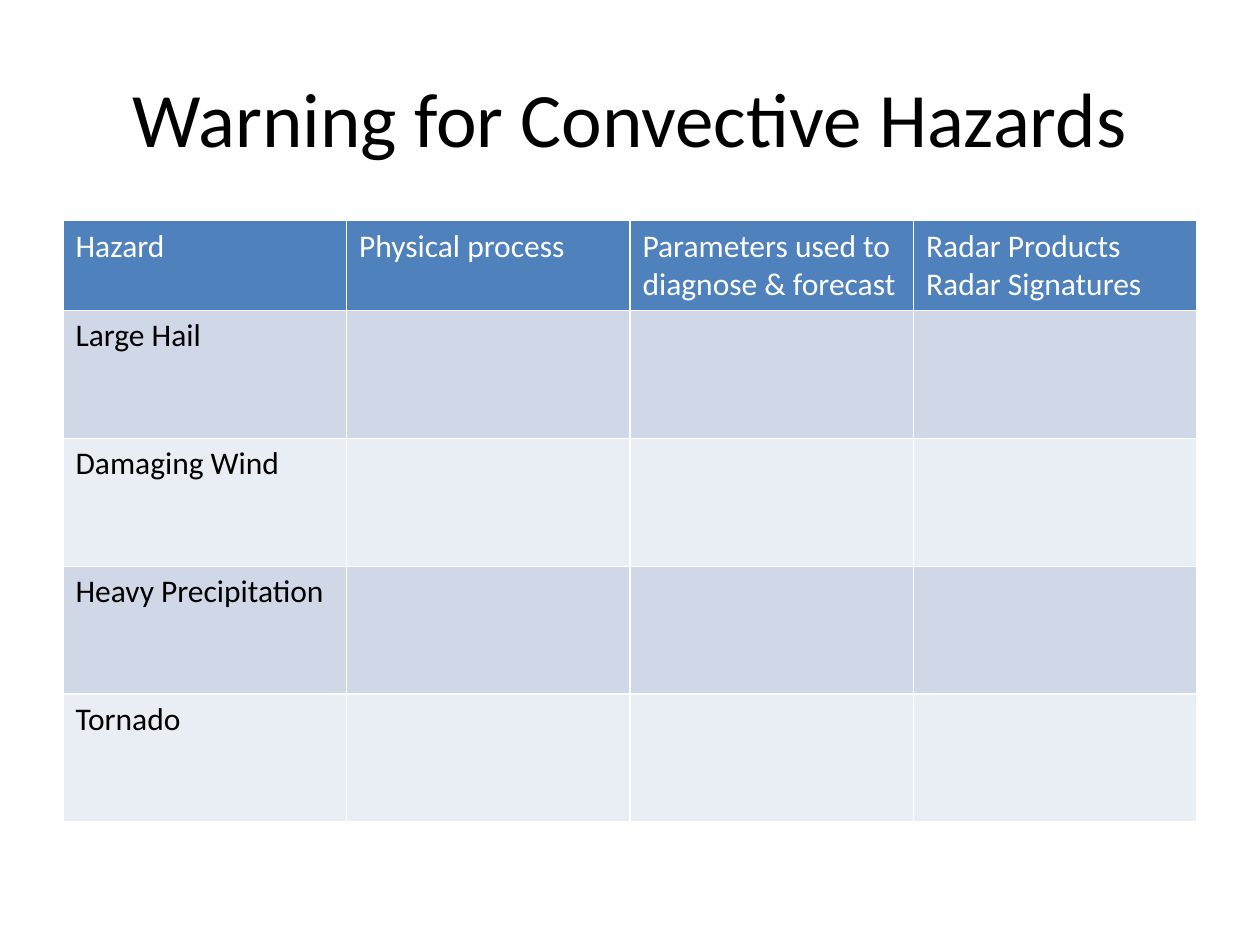
from pptx import Presentation
from pptx.dml.color import RGBColor
from pptx.enum.text import MSO_ANCHOR, PP_ALIGN
from pptx.oxml import parse_xml
from pptx.oxml.ns import nsdecls
from pptx.util import Cm, Pt

CENTER = PP_ALIGN.CENTER
MIDDLE = MSO_ANCHOR.MIDDLE

BLACK = RGBColor(0x00, 0x00, 0x00)
WHITE = RGBColor(0xFF, 0xFF, 0xFF)
HEADER_BLUE = RGBColor(0x4F, 0x81, 0xBD)
BAND_DARK = RGBColor(0xD0, 0xD8, 0xE8)
BAND_LIGHT = RGBColor(0xE9, 0xED, 0xF4)

TITLE_ONLY = 5
MARGIN = Cm(1.27)
CONTENT_WIDTH = Cm(22.86)
HEADER_HEIGHT = Cm(1.79)
ROW_HEIGHT = Cm(2.58)

HEADINGS = [
    "Hazard",
    "Physical process",
    "Parameters used to diagnose & forecast",
    "Radar Products\nRadar Signatures",
]
HAZARDS = ["Large Hail", "Damaging Wind", "Heavy Precipitation", "Tornado"]


class SlideBuilder:
    def __init__(self, slide, font_name="Calibri"):
        self.slide = slide
        self.font_name = font_name

    def set_text(self, frame, text, size, color):
        frame.text = text
        for para in frame.paragraphs:
            font = para.font
            font.name, font.size, font.bold = self.font_name, Pt(size), False
            font.color.rgb = color

    def title(self, text):
        box = self.slide.shapes.title
        box.left, box.top = MARGIN, Cm(0.76)
        box.width, box.height = CONTENT_WIDTH, Cm(3.18)
        frame = box.text_frame
        frame.vertical_anchor = MIDDLE
        self.set_text(frame, text, 44, BLACK)
        frame.paragraphs[0].alignment = CENTER

    def border(self, cell, color, width):
        """Draw the same line on all four sides; call before filling the cell."""
        properties = cell._tc.get_or_add_tcPr()
        for side in ("lnL", "lnR", "lnT", "lnB"):
            properties.append(parse_xml(
                f'<a:{side} {nsdecls("a")} w="{Pt(width)}"><a:solidFill>'
                f'<a:srgbClr val="{color}"/></a:solidFill></a:{side}>'))

    def table(self, headings, labels, top):
        """Add a header row and one banded row per label, blank after the label."""
        height = HEADER_HEIGHT + ROW_HEIGHT * len(labels)
        table = self.slide.shapes.add_table(
            len(labels) + 1, len(headings), MARGIN, top, CONTENT_WIDTH, height).table
        blanks = [""] * (len(headings) - 1)
        rows = [headings] + [[label] + blanks for label in labels]
        for index, texts in enumerate(rows):
            is_header = index == 0
            table.rows[index].height = HEADER_HEIGHT if is_header else ROW_HEIGHT
            band = BAND_DARK if index % 2 else BAND_LIGHT
            for column, text in enumerate(texts):
                cell = table.cell(index, column)
                self.border(cell, WHITE, 1)
                cell.fill.solid()
                cell.fill.fore_color.rgb = HEADER_BLUE if is_header else band
                self.set_text(cell.text_frame, text, 18, WHITE if is_header else BLACK)


def main():
    deck = Presentation()
    deck.slide_width, deck.slide_height = Cm(25.4), Cm(19.05)
    page = SlideBuilder(deck.slides.add_slide(deck.slide_layouts[TITLE_ONLY]))
    page.title("Warning for Convective Hazards")
    page.table(HEADINGS, HAZARDS, Cm(4.45))
    deck.save("out.pptx")


if __name__ == "__main__":
    main()
